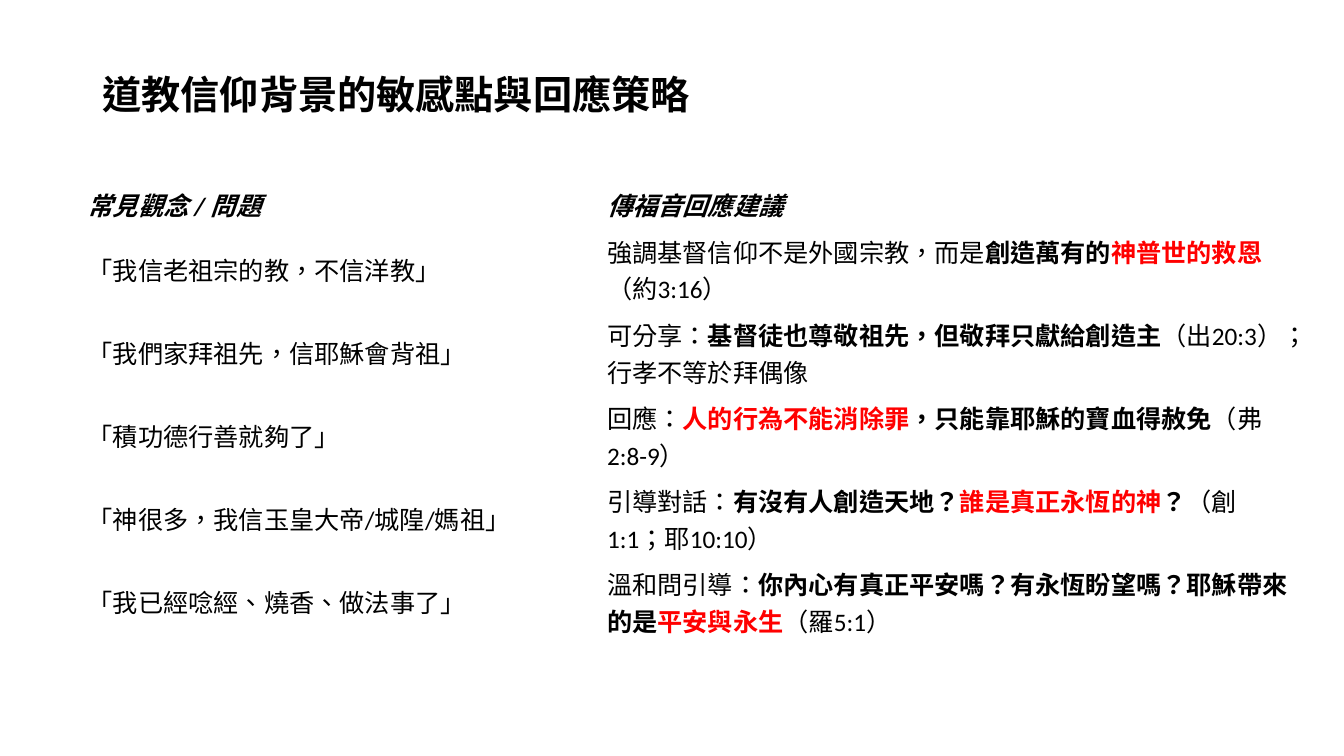
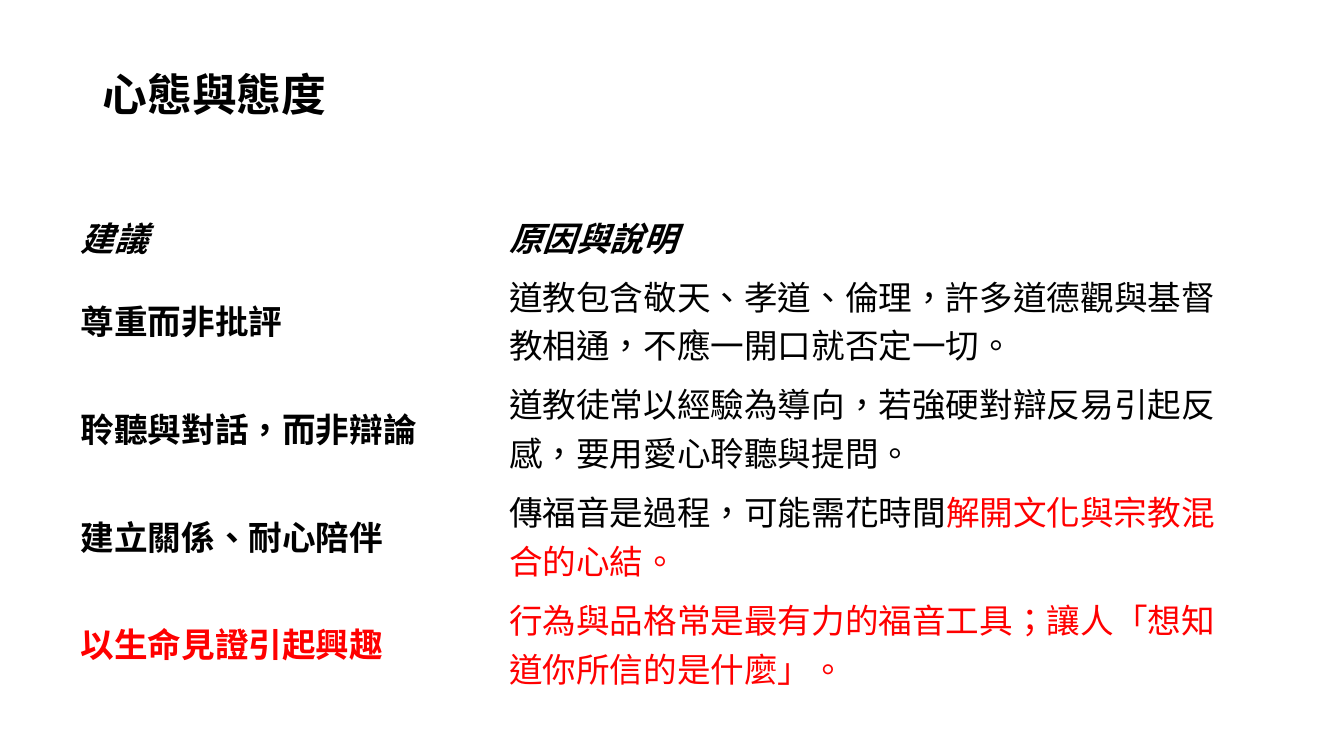
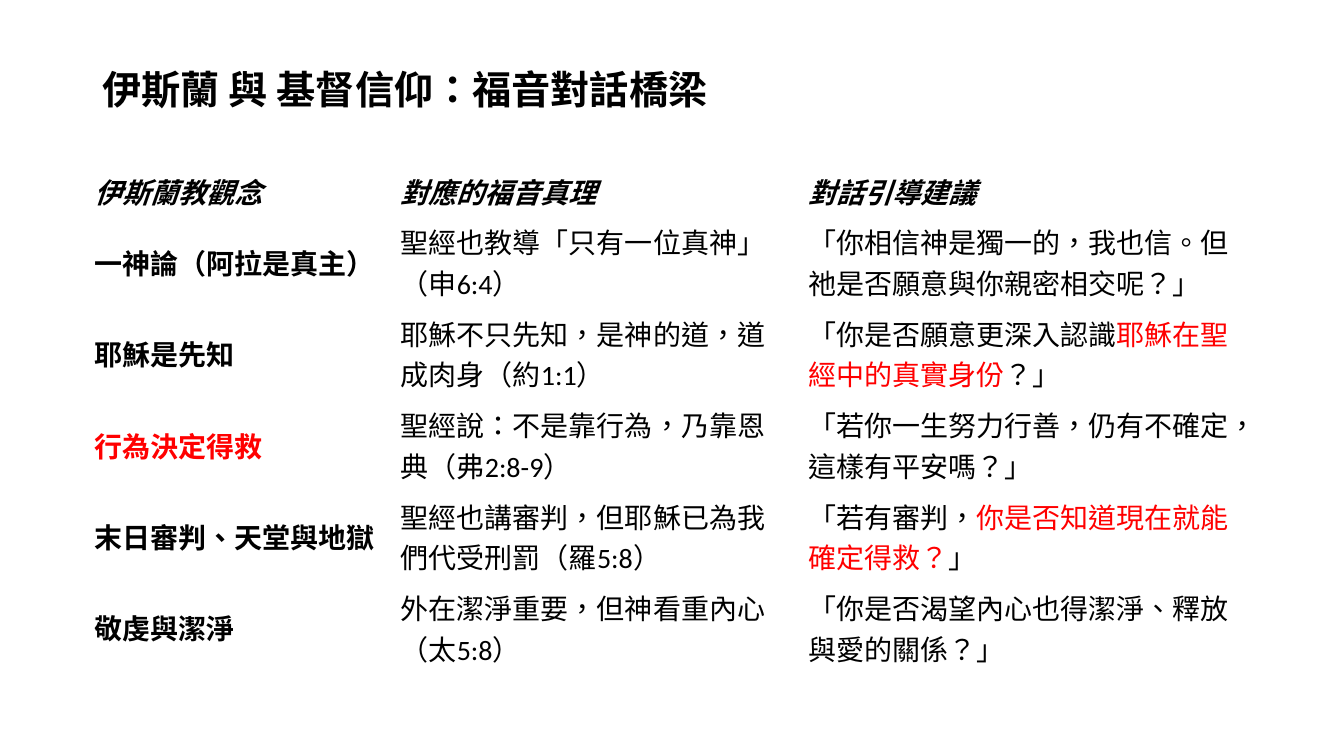
from pptx import Presentation
from pptx.dml.color import RGBColor
from pptx.enum import lang, text
from pptx.util import Pt

BLACK = RGBColor(0x00, 0x00, 0x00)
RED = RGBColor(0xFF, 0x00, 0x00)
FONT = "Calibri"

FAITH = [
    ["常見觀念 / 問題", "傳福音回應建議"],
    ["「我信老祖宗的教，不信洋教」",
     "強調基督信仰不是外國宗教，而是*創造萬有的^神普世的救恩^*（約3:16）"],
    ["「我們家拜祖先，信耶穌會背祖」",
     "可分享：*基督徒也尊敬祖先，但敬拜只獻給創造主*（出20:3）；行孝不等於拜偶像"],
    ["「積功德行善就夠了」",
     "回應：*^人的行為不能消除罪^，只能靠耶穌的寶血得赦免*（弗2:8-9）"],
    ["「神很多，我信玉皇大帝/城隍/媽祖」",
     "引導對話：*有沒有人創造天地？^誰是真正永恆的神^？*（創1:1；耶10:10）"],
    ["「我已經唸經、燒香、做法事了」",
     "溫和問引導：*你內心有真正平安嗎？有永恆盼望嗎？耶穌帶來的是^平安與永生^*（羅5:1）"],
]
HEART = [
    ["建議", "原因與說明"],
    ["*尊重而非批評*",
     "道教包含敬天、孝道、倫理，許多道德觀與基督教相通，不應一開口就否定一切。"],
    ["*聆聽與對話，而非辯論*",
     "道教徒常以經驗為導向，若強硬對辯反易引起反感，要用愛心聆聽與提問。"],
    ["*建立關係、耐心陪伴*",
     "傳福音是過程，可能需花時間^解開文化與宗教混合的心結。^"],
    ["*^以生命見證引起興趣^*",
     "^行為與品格常是最有力的福音工具；讓人「想知道你所信的是什麼」。^"],
]
BRIDGE = [
    ["伊斯蘭教觀念", "對應的福音真理", "對話引導建議"],
    ["*一神論（阿拉是真主）*", "聖經也教導「只有一位真神」（申6:4）",
     "「你相信神是獨一的，我也信。但祂是否願意與你親密相交呢？」"],
    ["*耶穌是先知*", "耶穌不只先知，是神的道，道成肉身（約1:1）",
     "「你是否願意更深入認識^耶穌在聖經中的真實身份^？」"],
    ["*^行為決定得救^*", "聖經說：不是靠行為，乃靠恩典（弗2:8-9）",
     "「若你一生努力行善，仍有不確定，這樣有平安嗎？」"],
    ["*末日審判、天堂與地獄*", "聖經也講審判，但耶穌已為我們代受刑罰（羅5:8）",
     "「若有審判，^你是否知道現在就能確定得救？^」"],
    ["*敬虔與潔淨*", "外在潔淨重要，但神看重內心（太5:8）",
     "「你是否渴望內心也得潔淨、釋放與愛的關係？」"],
]


def style(run, size, bold=False, slant=False, color=BLACK):
    font = run.font
    font.name, font.size = FONT, Pt(size)
    font.bold, font.italic = bold, slant
    font.color.rgb = color
    font.language_id = lang.MSO_LANGUAGE_ID.TRADITIONAL_CHINESE


def write(para, words, size, head):
    """Fill a paragraph; * switches bold and ^ switches red on and off."""
    for i, part in enumerate(words.split("*")):
        for j, piece in enumerate(part.split("^")):
            if piece:
                run = para.add_run()
                run.text = piece
                style(run, size, head or i % 2 == 1, head,
                      RED if j % 2 else BLACK)


def add_title(slide, words, top, size):
    title = slide.shapes.title
    title.left, title.top = Pt(66), Pt(top)
    title.width, title.height = Pt(828), Pt(57)
    frame = title.text_frame
    frame.text = words
    frame.word_wrap = True
    frame.auto_size = text.MSO_AUTO_SIZE.NONE
    frame.vertical_anchor = text.MSO_ANCHOR.MIDDLE
    para = frame.paragraphs[0]
    para.alignment = text.PP_ALIGN.LEFT
    para.line_spacing = 0.9
    style(para.runs[0], size, bold=True)


def add_grid(slide, left, top, widths, highs, rows, size):
    """Draw a plain table; highs holds the header and the body row height."""
    first, body = highs
    tall = first + body * (len(rows) - 1)
    grid = slide.shapes.add_table(len(rows), len(widths), Pt(left), Pt(top),
                                  Pt(sum(widths)), Pt(tall)).table
    grid.first_row = grid.horz_banding = False
    for col, width in zip(grid.columns, widths):
        col.width = Pt(width)
    for r, row in enumerate(rows):
        grid.rows[r].height = Pt(body if r else first)
        for c, words in enumerate(row):
            cell = grid.cell(r, c)
            cell.fill.background()
            cell.vertical_anchor = text.MSO_ANCHOR.MIDDLE
            write(cell.text_frame.paragraphs[0], words, size, r == 0)


def add_page(deck, title, grid):
    slide = deck.slides.add_slide(deck.slide_layouts[5])
    add_title(slide, *title)
    add_grid(slide, *grid)


def main():
    deck = Presentation()
    deck.slide_width, deck.slide_height = Pt(960), Pt(540)
    add_page(deck, ("道教信仰背景的敏感點與回應策略", 40.5, 28),
             (55.5, 129, (371, 502), (34, 59), FAITH, 18))
    add_page(deck, ("心態與態度", 41, 32),
             (50.5, 148, (306, 522), (42, 77), HEART, 24))
    add_page(deck, ("伊斯蘭 與 基督信仰：福音對話橋梁", 37, 28),
             (60, 118, (219, 291, 328), (36.5, 65), BRIDGE, 20))
    deck.save("out.pptx")


if __name__ == "__main__":
    main()
